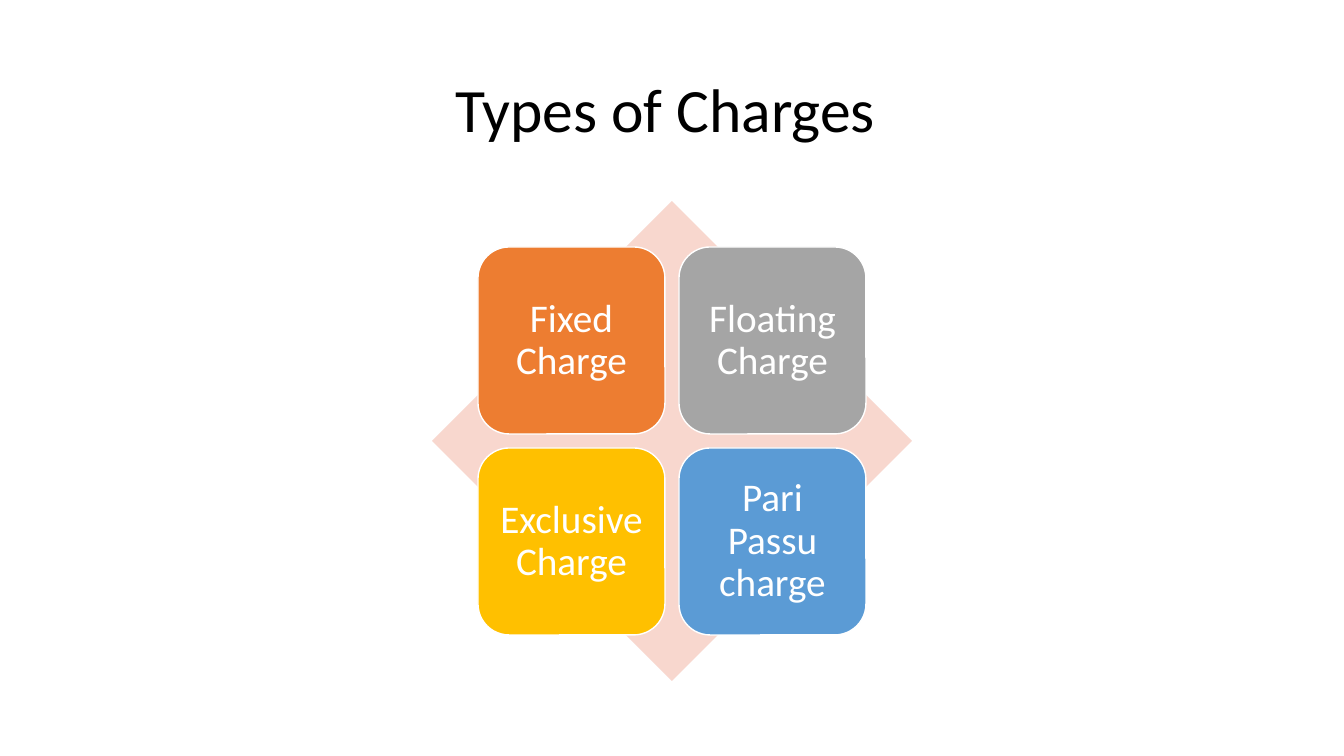
"""Build the Types of Charges slide: four rounded tiles over a diamond."""
import pptx
import pptx.util
import pptx.dml.color
import pptx.enum.shapes
import pptx.enum.text

TITLE = "Types of Charges "
TILES = [
    ("Fixed Charge", "ED7D31"),
    ("Floating Charge", "A5A5A5"),
    ("Exclusive Charge", "FFC000"),
    ("Pari Passu charge", "5B9BD5"),
]
THEME = {
    "font": "Calibri",
    "title_size": 44,
    "tile_size": 28,
    "title_color": "000000",
    "tile_text": "FFFFFF",
    "outline": "FFFFFF",
    "diamond": "F8D7CE",
}

SLIDE_WIDTH, SLIDE_HEIGHT = 1344, 756
TITLE_BOX = (93, 40, 1159, 146)
DIAMOND_LEFT, DIAMOND_TOP, DIAMOND_SIZE = 432, 201, 480
TILE_SIZE, TILE_GAP, TILE_INSET = 187, 14, 12
COLUMNS = 2
EMU_PER_PX = 914400 / 100.8


def px(length):
    return pptx.util.Emu(round(length * EMU_PER_PX))


def color(name):
    return pptx.dml.color.RGBColor.from_string(name)


def write(frame, text, size, text_color):
    frame.word_wrap = True
    frame.vertical_anchor = pptx.enum.text.MSO_ANCHOR.MIDDLE
    frame.text = text
    para = frame.paragraphs[0]
    para.alignment = pptx.enum.text.PP_ALIGN.CENTER
    para.line_spacing = 0.9
    span = para.runs[0]
    span.font.name = THEME["font"]
    span.font.size = pptx.util.Pt(size)
    span.font.color.rgb = color(text_color)


def add_filled(page, kind, left, top, size, fill):
    shape = page.shapes.add_shape(kind, px(left), px(top), px(size), px(size))
    shape.shadow.inherit = False
    shape.fill.solid()
    shape.fill.fore_color.rgb = color(fill)
    shape.line.fill.background()
    return shape


def add_tile(page, index, label, fill):
    row, column = divmod(index, COLUMNS)
    pitch = TILE_SIZE + TILE_GAP
    margin = (DIAMOND_SIZE - COLUMNS * pitch + TILE_GAP) / 2
    left = DIAMOND_LEFT + margin + column * pitch
    top = DIAMOND_TOP + margin + row * pitch
    kind = pptx.enum.shapes.MSO_SHAPE.ROUNDED_RECTANGLE
    tile = add_filled(page, kind, left, top, TILE_SIZE, fill)
    tile.line.color.rgb = color(THEME["outline"])
    tile.line.width = pptx.util.Pt(1)
    frame = tile.text_frame
    frame.margin_left = frame.margin_right = px(TILE_INSET)
    frame.margin_top = frame.margin_bottom = px(TILE_INSET)
    write(frame, label, THEME["tile_size"], THEME["tile_text"])


def main():
    deck = pptx.Presentation()
    deck.slide_width, deck.slide_height = px(SLIDE_WIDTH), px(SLIDE_HEIGHT)
    page = deck.slides.add_slide(deck.slide_layouts[6])
    box = page.shapes.add_textbox(*map(px, TITLE_BOX))
    write(box.text_frame, TITLE, THEME["title_size"], THEME["title_color"])
    diamond = pptx.enum.shapes.MSO_SHAPE.DIAMOND
    add_filled(page, diamond, DIAMOND_LEFT, DIAMOND_TOP, DIAMOND_SIZE, THEME["diamond"])
    for index, (label, fill) in enumerate(TILES):
        add_tile(page, index, label, fill)
    deck.save("out.pptx")


if __name__ == "__main__":
    main()
